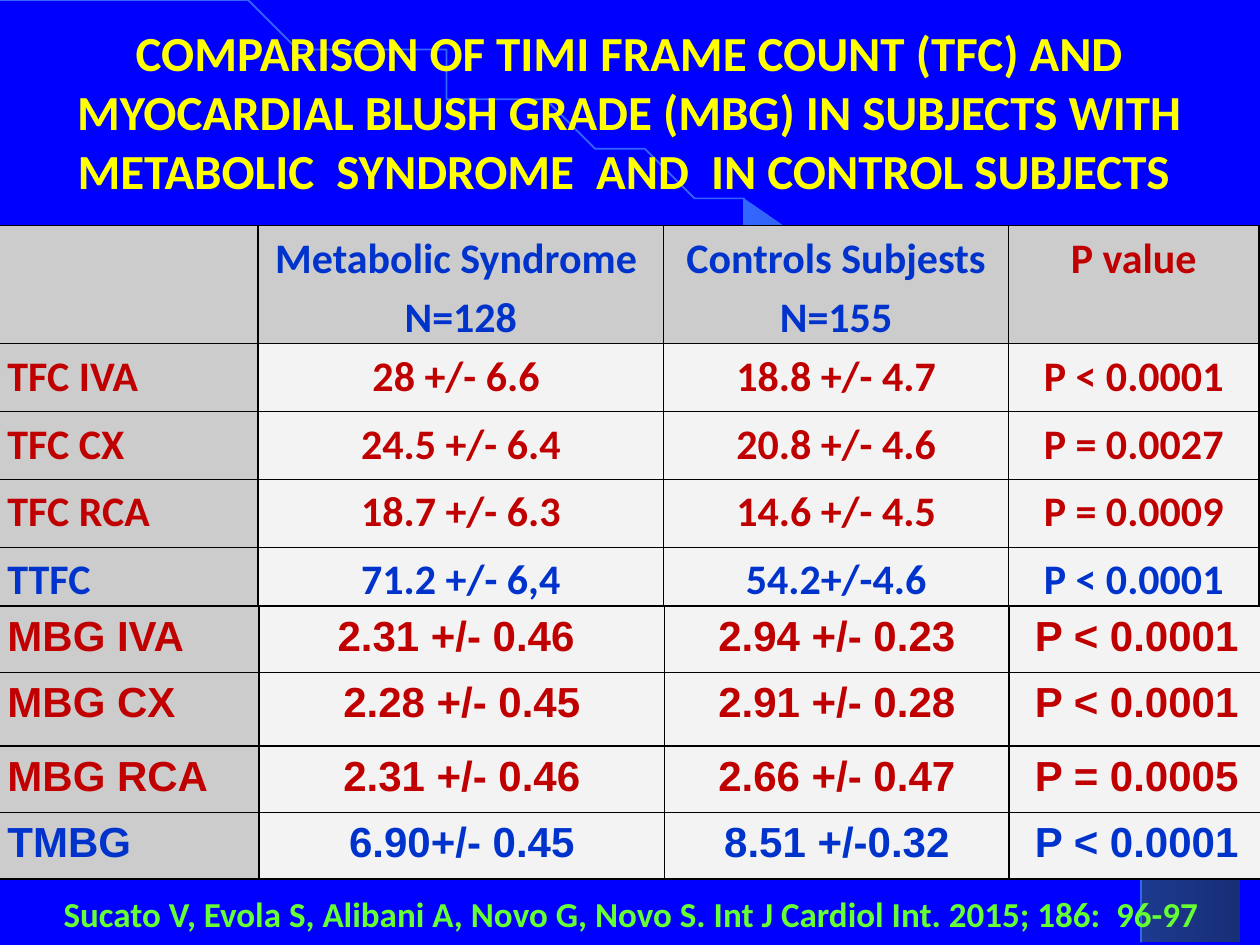
import lxml.etree
import pptx
import pptx.dml.color
import pptx.enum.text
import pptx.oxml.ns
import pptx.util

Cm, Pt = pptx.util.Cm, pptx.util.Pt
CENTER = pptx.enum.text.PP_ALIGN.CENTER
COLORS = {
    "background": "0000FF", "arc": "3366FF", "band_end": "182F76",
    "title": "FFFF00", "citation": "66FF33", "border": "000000",
    "label_fill": "CCCCCC", "value_fill": "F3F3F3",
    "red": "C00000", "blue": "0033CC",
}


def rgb(name):
    return pptx.dml.color.RGBColor.from_string(COLORS[name])


def write(frame, text, font_name, size, color, align=None, spacing=None):
    frame.text = text
    for paragraph in frame.paragraphs:
        paragraph.alignment = align
        paragraph.line_spacing = spacing
        for run in paragraph.runs:
            run.font.name = font_name
            run.font.size = Pt(size)
            run.font.bold = True
            run.font.color.rgb = rgb(color)


deck = pptx.Presentation()
deck.slide_width, deck.slide_height = Cm(25.4), Cm(19.05)
slide = deck.slides.add_slide(deck.slide_layouts[5])
slide.background.fill.solid()
slide.background.fill.fore_color.rgb = rgb("background")

# Background arc, sampled from one cubic curve, in centimetres
STEPS = 50
controls = [(0, 0), (12.9, 0), (23.37, 8.51), (23.37, 19.02)]
arc_points = []
for step in range(STEPS + 1):
    t = step / STEPS
    weights = [(1 - t) ** 3, 3 * t * (1 - t) ** 2, 3 * t ** 2 * (1 - t), t ** 3]
    arc_points.append(tuple(sum(w * point[axis] for w, point in zip(weights, controls))
                            for axis in (0, 1)))

# Gradient band between the lower arc and the right edge
band_points = arc_points[22:] + [(25.35, 19.02), (25.35, 10.74)]
builder = slide.shapes.build_freeform(*band_points[0], scale=Cm(1))
builder.add_line_segments(band_points[1:], close=True)
band = builder.convert_to_shape()
band.shadow.inherit = False
band.line.fill.background()
band.fill.gradient()
band.fill.gradient_angle = 0
for stop, color in zip(band.fill.gradient_stops, ("arc", "band_end")):
    stop.color.rgb = rgb(color)

builder = slide.shapes.build_freeform(*arc_points[0], scale=Cm(1))
builder.add_line_segments(arc_points[1:], close=False)
arc = builder.convert_to_shape()
arc.shadow.inherit = False
arc.fill.background()
arc.line.color.rgb = rgb("arc")
arc.line.width = Pt(1)

# Frame count table and blush grade table
frame_counts = [
    ("", "Metabolic Syndrome \nN=128", "Controls Subjests\nN=155", "P value"),
    ("TFC IVA", "28 +/- 6.6 ", "18.8 +/- 4.7", "P < 0.0001"),
    ("TFC CX", "24.5 +/- 6.4", "20.8 +/- 4.6", "P = 0.0027"),
    ("TFC RCA", "18.7 +/- 6.3", "14.6 +/- 4.5", "P = 0.0009"),
    ("TTFC", "71.2 +/- 6,4", "54.2+/-4.6", "P < 0.0001"),
]
blush_grades = [
    ("MBG IVA", "2.31 +/- 0.46 ", "2.94 +/- 0.23", "P < 0.0001"),
    ("MBG CX", "2.28 +/- 0.45", "2.91 +/- 0.28", "P < 0.0001"),
    ("MBG RCA", "2.31 +/- 0.46", "2.66 +/- 0.47", "P = 0.0005"),
    ("TMBG", "6.90+/- 0.45", "8.51 +/-0.32", "P < 0.0001"),
]
sections = [
    (frame_counts, "Calibri", 4.55, (5.23, 8.18, 6.95, 5.05), (2.08, 1.37, 1.37, 1.37, 1.37)),
    (blush_grades, "Arial", 12.22, (5.25, 8.18, 6.94, 5.15), (1.34, 1.48, 1.34, 1.34)),
]
for rows, font_name, top, widths, heights in sections:
    results = slide.shapes.add_table(len(rows), len(widths), Cm(-0.03), Cm(top),
                                     Cm(sum(widths)), Cm(sum(heights))).table
    for column, width in zip(results.columns, widths):
        column.width = Cm(width)
    for r, (row, height) in enumerate(zip(rows, heights)):
        results.rows[r].height = Cm(height)
        is_header = row[0] == ""
        is_total = row[0] in ("TTFC", "TMBG")
        for c, text in enumerate(row):
            cell = results.cell(r, c)
            cell.margin_left = cell.margin_right = Cm(0.18)
            cell.margin_top = cell.margin_bottom = 0
            color = "blue" if is_total or (is_header and c < 3) else "red"
            write(cell.text_frame, text, font_name, 24, color,
                  CENTER if c else None, 1.15)
            properties = cell._tc.get_or_add_tcPr()
            for side in ("a:lnL", "a:lnR", "a:lnT", "a:lnB"):
                border = lxml.etree.SubElement(
                    properties, pptx.oxml.ns.qn(side), w=str(Pt(1)))
                solid = lxml.etree.SubElement(border, pptx.oxml.ns.qn("a:solidFill"))
                lxml.etree.SubElement(solid, pptx.oxml.ns.qn("a:srgbClr"),
                                      val=COLORS["border"])
            cell.fill.solid()
            cell.fill.fore_color.rgb = rgb("label_fill" if is_header or c == 0
                                           else "value_fill")

# Title, brought in front of the arc
title = slide.shapes.title
slide.shapes._spTree.append(title._element)
title.left, title.top, title.width, title.height = Cm(-0.03), Cm(0.33), Cm(25.42), Cm(3.84)
write(title.text_frame,
      "COMPARISON OF TIMI FRAME COUNT (TFC) AND MYOCARDIAL BLUSH GRADE (MBG) "
      "IN SUBJECTS WITH METABOLIC  SYNDROME  AND  IN CONTROL SUBJECTS ",
      "Calibri", 28, "title", CENTER)
title.text_frame.word_wrap = True
title.text_frame.auto_size = pptx.enum.text.MSO_AUTO_SIZE.NONE
title.text_frame.vertical_anchor = pptx.enum.text.MSO_ANCHOR.TOP

# Citation
citation = slide.shapes.add_textbox(Cm(-0.1), Cm(17.86), Cm(25.66), Cm(1.12))
write(citation.text_frame,
      "Sucato V, Evola S, Alibani A, Novo G, Novo S. Int J Cardiol Int. 2015; 186:  96-97",
      "Calibri", 20, "citation", CENTER)
citation.text_frame.word_wrap = True
citation.text_frame.vertical_anchor = pptx.enum.text.MSO_ANCHOR.MIDDLE

deck.save("out.pptx")
